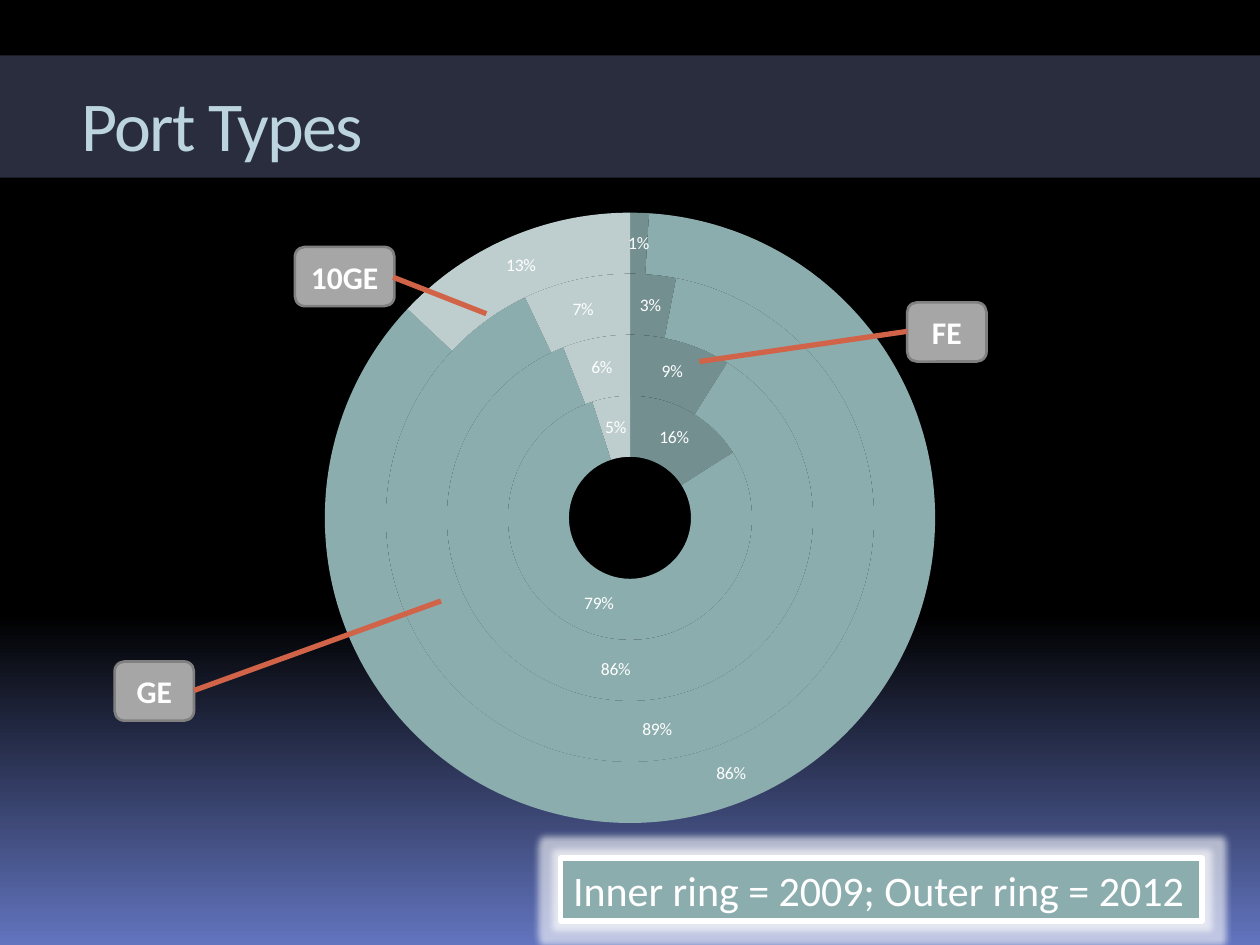
"""Build the Port Types slide with a four-ring doughnut chart and callouts."""
from dataclasses import dataclass

import pptx
import pptx.chart.data
import pptx.dml.color
import pptx.enum.chart
import pptx.enum.shapes
import pptx.enum.text
import pptx.oxml
import pptx.oxml.ns
import pptx.util

Inches = pptx.util.Inches
Pt = pptx.util.Pt
SHAPES = pptx.enum.shapes.MSO_SHAPE
ANCHORS = pptx.enum.text.MSO_ANCHOR
ALIGNS = pptx.enum.text.PP_ALIGN
NAMESPACE = pptx.oxml.ns.nsdecls("a")

FONT = "Calibri"
WHITE, TEAL, ORANGE = "FFFFFF", "8CADAE", "D16349"
SLICE_COLORS = ("738F90", TEAL, "BECECE")
RINGS = (
    (0.16, 0.79, 0.05),
    (0.09, 0.86, 0.06),
    (0.03, 0.89, 0.07),
    (0.01, 0.86, 0.13),
)


@dataclass
class Callout:
    text: str
    left: float
    top: float
    width: float
    start: tuple[float, float]
    end: tuple[float, float]


CALLOUTS = (
    Callout("FE", 7.2, 2.4, 0.63, (7.2, 2.63), (5.55, 2.87)),
    Callout("10GE", 2.34, 1.96, 0.79, (3.12, 2.2), (3.86, 2.49)),
    Callout("GE", 0.91, 5.25, 0.63, (1.54, 5.48), (3.5, 4.77)),
)


def color(value: str) -> pptx.dml.color.RGBColor:
    return pptx.dml.color.RGBColor.from_string(value)


def apply(target, values: dict) -> None:
    for name, value in values.items():
        setattr(target, name, value)


def style_font(font, size: float, shade: str, bold: bool = False) -> None:
    apply(font, {"name": FONT, "size": Pt(size), "bold": bold})
    font.color.rgb = color(shade)


def write(box, text: str, size: float, shade: str, bold: bool = False, **frame_format):
    frame = box.text_frame
    apply(frame, frame_format)
    para = frame.paragraphs[0]
    span = para.add_run()
    span.text = text
    style_font(span.font, size, shade, bold)
    return para


def add_box(page, kind, place: tuple, fill: str, line: str = "", width: float = 0):
    box = page.shapes.add_shape(kind, *map(Inches, place))
    box.shadow.inherit = False
    box.fill.solid()
    box.fill.fore_color.rgb = color(fill)
    if line:
        box.line.color.rgb = color(line)
        box.line.width = Pt(width)
    else:
        box.line.fill.background()
    return box


def add_background(page) -> None:
    fill = page.background.fill
    fill.gradient()
    fill.gradient_angle = 270
    for stop, (position, shade) in zip(fill.gradient_stops, ((0.65, "000000"), (1, "6274BE"))):
        stop.position = position
        stop.color.rgb = color(shade)


def add_title(page) -> None:
    band = add_box(page, SHAPES.RECTANGLE, (0, 0.44, 10.04, 0.97), "68729B")
    shade = band.fill._xPr.find(".//" + pptx.oxml.ns.qn("a:srgbClr"))
    shade.append(pptx.oxml.parse_xml(f'<a:alpha {NAMESPACE} val="40000"/>'))
    box = page.shapes.add_textbox(*map(Inches, (0.55, 0.56, 8.5, 1)))
    para = write(box, "Port Types", 40, "BCD4E0", word_wrap=True, margin_top=Inches(0.09))
    para.runs[0].font._element.set("spc", "-100")


def add_rings(page) -> None:
    data = pptx.chart.data.CategoryChartData(number_format="0%")
    data.categories = ["1", "2", "3"]
    for number, values in enumerate(RINGS, 1):
        data.add_series(f"Series {number}", values)
    kind = pptx.enum.chart.XL_CHART_TYPE.DOUGHNUT
    place = map(Inches, (0.73, 1.55, 8.54, 5.12))
    chart = page.shapes.add_chart(kind, *place, data).chart
    apply(chart, {"has_legend": False, "has_title": False})
    style_font(chart.font, 10, WHITE)
    plot = chart.plots[0]
    plot.vary_by_categories = True
    plot._element.find(pptx.oxml.ns.qn("c:holeSize")).set("val", "40")
    for series in plot.series:
        for index, shade in enumerate(SLICE_COLORS):
            piece = series.points[index].format
            piece.fill.solid()
            piece.fill.fore_color.rgb = color(shade)
            piece.line.fill.background()
        labels = series.data_labels
        apply(labels, {"show_value": True, "show_percentage": False,
                       "number_format": "0%", "number_format_is_linked": False})
        style_font(labels.font, 10, WHITE)


def add_label(page, callout: Callout) -> None:
    place = (callout.left, callout.top, callout.width, 0.47)
    box = add_box(page, SHAPES.ROUNDED_RECTANGLE, place, "A6A6A6", "808080", 1.5)
    para = write(box, callout.text, 18, WHITE, True,
                 word_wrap=True, vertical_anchor=ANCHORS.MIDDLE)
    para.alignment = ALIGNS.CENTER


def add_pointer(page, callout: Callout) -> None:
    ends = map(Inches, (*callout.start, *callout.end))
    pointer = page.shapes.add_connector(pptx.enum.shapes.MSO_CONNECTOR.STRAIGHT, *ends)
    pointer.line.color.rgb = color(ORANGE)
    pointer.line.width = Pt(3)
    pointer._element.spPr.append(pptx.oxml.parse_xml(f"<a:effectLst {NAMESPACE}/>"))


def add_ring_note(page) -> None:
    box = add_box(page, SHAPES.RECTANGLE, (4.45, 6.81, 5.09, 0.5), TEAL, WHITE, 3)
    para = write(box, "Inner ring = 2009; Outer ring = 2012", 24, WHITE,
                 word_wrap=False, vertical_anchor=ANCHORS.TOP,
                 auto_size=pptx.enum.text.MSO_AUTO_SIZE.SHAPE_TO_FIT_TEXT)
    para.alignment = ALIGNS.LEFT
    effects = box._element.spPr.find(pptx.oxml.ns.qn("a:effectLst"))
    effects.append(pptx.oxml.parse_xml(
        f'<a:glow {NAMESPACE} rad="{Pt(8)}"><a:srgbClr val="{WHITE}">'
        '<a:alpha val="60000"/></a:srgbClr></a:glow>'))


def main() -> None:
    deck = pptx.Presentation()
    apply(deck, {"slide_width": Inches(10), "slide_height": Inches(7.5)})
    page = deck.slides.add_slide(deck.slide_layouts[6])
    add_background(page)
    add_title(page)
    add_rings(page)
    for draw in (add_label, add_pointer):
        for callout in CALLOUTS:
            draw(page, callout)
    add_ring_note(page)
    deck.save("out.pptx")


if __name__ == "__main__":
    main()
